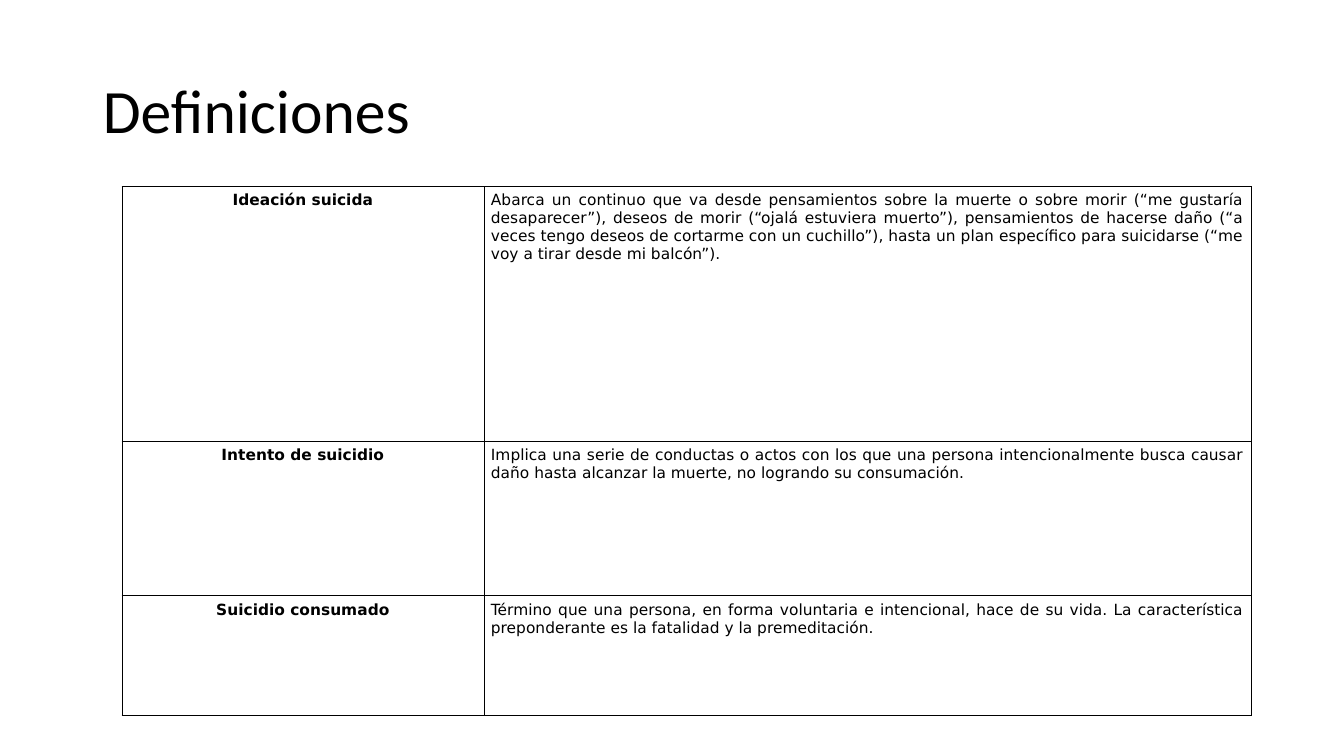
from lxml.etree import SubElement
from pptx import Presentation
from pptx.dml.color import RGBColor
from pptx.enum.text import MSO_ANCHOR, PP_ALIGN
from pptx.oxml.ns import qn
from pptx.util import Inches, Pt

# Content
TITLE = "Definiciones"
DEFINITIONS = [
    ("Ideación suicida",
     "Abarca un continuo que va desde pensamientos sobre la muerte o sobre morir "
     "(“me gustaría desaparecer”), deseos de morir (“ojalá estuviera muerto”), "
     "pensamientos de hacerse daño (“a veces tengo deseos de cortarme con un cuchillo”), "
     "hasta un plan específico para suicidarse (“me voy a tirar desde mi balcón”)."),
    ("Intento de suicidio",
     "Implica una serie de conductas o actos con los que una persona intencionalmente "
     "busca causar daño hasta alcanzar la muerte, no logrando su consumación."),
    ("Suicidio consumado",
     "Término que una persona, en forma voluntaria e intencional, hace de su vida. "
     "La característica preponderante es la fatalidad y la premeditación."),
]
COLORS = {"text": "000000", "border": "000000", "back": "FFFFFF"}

# Layout and formats
COL_WIDTHS = [3.59, 7.61]
ROW_HEIGHTS = [2.53, 1.53, 1.19]
TITLE_FONT = {"name": "Calibri", "size": Pt(44), "bold": False}
TERM_FONT = {"name": "DejaVu Sans", "size": Pt(11), "bold": True}
MEANING_FONT = {**TERM_FONT, "bold": False}
COLUMN_FORMATS = [(PP_ALIGN.CENTER, TERM_FONT), (PP_ALIGN.JUSTIFY, MEANING_FONT)]
MARGINS = {"margin_left": 0.07, "margin_top": 0.05,
           "margin_right": 0.07, "margin_bottom": 0.05}


def write(tf, text, align, font):
    p = tf.paragraphs[0]
    p.alignment = align
    r = p.add_run()
    r.text = text
    for name, value in font.items():
        setattr(r.font, name, value)
    r.font.color.rgb = RGBColor.from_string(COLORS["text"])
    return p


def add_borders(cell):
    tcPr = cell._tc.get_or_add_tcPr()
    for i, side in enumerate(("lnL", "lnR", "lnT", "lnB")):
        ln = SubElement(tcPr, qn(f"a:{side}"), w=str(Pt(0.5)))
        fill = SubElement(ln, qn("a:solidFill"))
        SubElement(fill, qn("a:srgbClr"), val=COLORS["border"])
        tcPr.insert(i, ln)


prs = Presentation()
prs.slide_width, prs.slide_height = Inches(13.33), Inches(7.5)
s = prs.slides.add_slide(prs.slide_layouts[5])
s.background.fill.solid()
s.background.fill.fore_color.rgb = RGBColor.from_string(COLORS["back"])

# Title
title = s.shapes.title
title.left, title.top, title.width, title.height = map(Inches, (0.92, 0.4, 11.5, 1.45))
tf = title.text_frame
tf.vertical_anchor = MSO_ANCHOR.MIDDLE
write(tf, TITLE, PP_ALIGN.LEFT, TITLE_FONT).line_spacing = 0.9

# Table of definitions
table = s.shapes.add_table(
    len(DEFINITIONS), len(COL_WIDTHS), Inches(1.21), Inches(1.85),
    Inches(sum(COL_WIDTHS)), Inches(sum(ROW_HEIGHTS))).table
table.first_row = table.horz_banding = False
for column, width in zip(table.columns, COL_WIDTHS):
    column.width = Inches(width)
for row, height, texts in zip(table.rows, ROW_HEIGHTS, DEFINITIONS):
    row.height = Inches(height)
    for cell, text, (align, font) in zip(row.cells, texts, COLUMN_FORMATS):
        for name, value in MARGINS.items():
            setattr(cell, name, Inches(value))
        cell.vertical_anchor = MSO_ANCHOR.TOP
        cell.fill.background()
        add_borders(cell)
        write(cell.text_frame, text, align, font)

prs.save("out.pptx")
